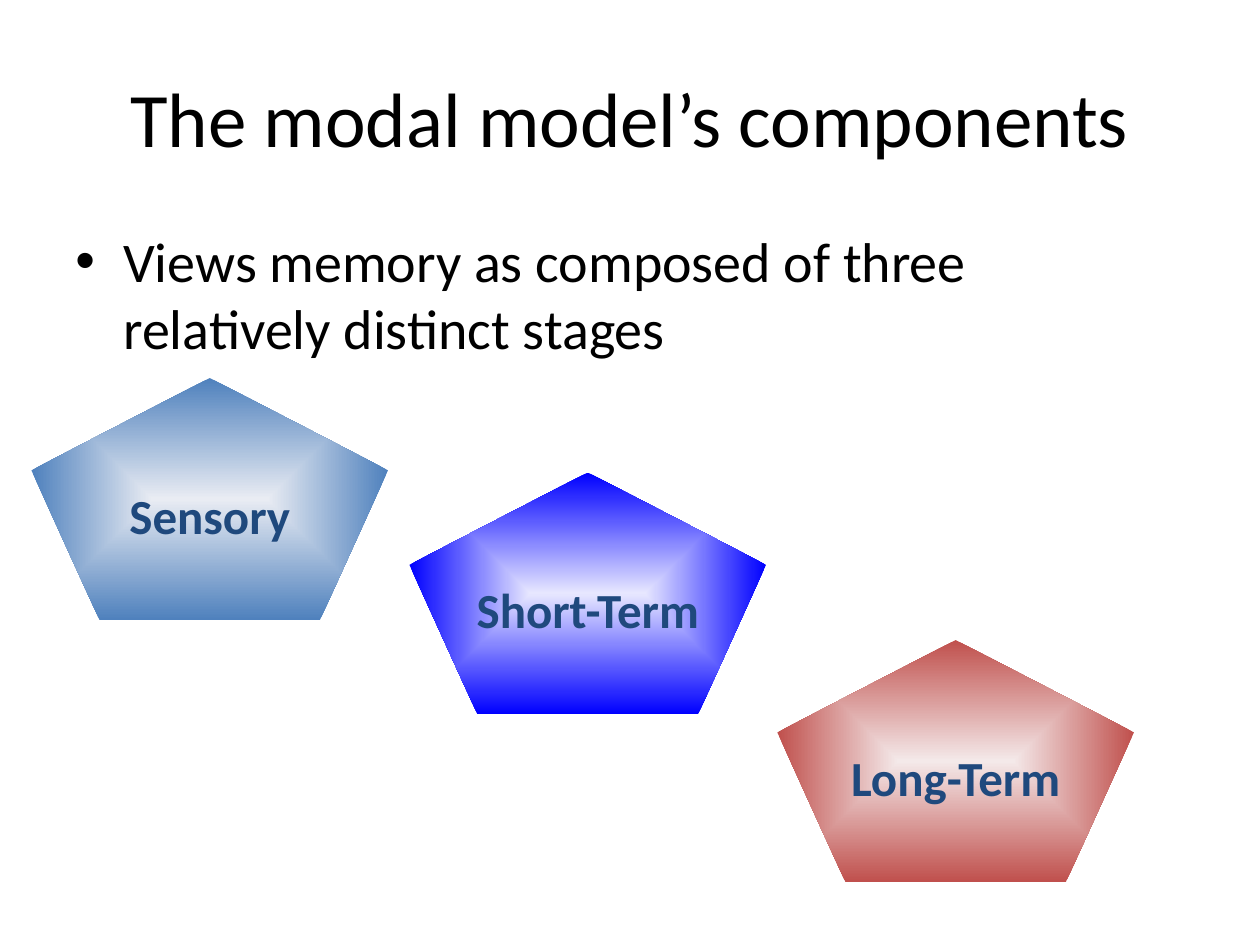
from lxml import etree
from pptx import Presentation
from pptx import util as u
from pptx.dml import color
from pptx.enum import shapes, text
from pptx.oxml import ns

COLORS = {
    "text": "000000",
    "label": "1F497D",
    "sensory": ("E9ECF3", "4F81BD"),
    "short": ("E7E7FF", "0000FF"),
    "long": ("F4E9E9", "C0504D"),
}


def add_text(shape, words, size, hue, bold=False):
    paragraph = shape.text_frame.paragraphs[0]
    run = paragraph.add_run()
    run.text = words
    run.font.name = "Calibri"
    run.font.size = u.Pt(size)
    run.font.bold = bold
    run.font.color.rgb = color.RGBColor.from_string(hue)
    return paragraph


prs = Presentation()
prs.slide_width, prs.slide_height = u.Inches(10), u.Inches(7.5)
slide = prs.slides.add_slide(prs.slide_layouts[6])

# Title
title = slide.shapes.add_textbox(u.Inches(0.5), u.Inches(0.3), u.Inches(9), u.Inches(1.25))
title.text_frame.word_wrap = True
title.text_frame.vertical_anchor = text.MSO_ANCHOR.MIDDLE
heading = add_text(title, "The modal model’s components", 44, COLORS["text"])
heading.alignment = text.PP_ALIGN.CENTER

# Bulleted summary with a hanging indent
summary = slide.shapes.add_textbox(u.Inches(0.5), u.Inches(1.75), u.Inches(9), u.Inches(4.95))
summary.text_frame.word_wrap = True
point = add_text(summary, "Views memory as composed of three relatively distinct stages",
                 32, COLORS["text"])
point.space_before = u.Pt(6.4)
point_pr = point._p.get_or_add_pPr()
point_pr.set("marL", str(u.Inches(0.38)))
point_pr.set("indent", str(u.Inches(-0.38)))
etree.SubElement(point_pr, ns.qn("a:buFont"), typeface="Arial")
etree.SubElement(point_pr, ns.qn("a:buChar"), char="•")

# Three memory stages, stepping down to the right
stages = [
    ("Sensory", 0.25, 3, "sensory"),
    ("Short-Term", 3.25, 3.75, "short"),
    ("Long-Term", 6.17, 5.08, "long"),
]
for name, left, top, key in stages:
    stage = slide.shapes.add_shape(shapes.MSO_SHAPE.REGULAR_PENTAGON, u.Inches(left),
                                   u.Inches(top), u.Inches(2.83), u.Inches(1.92))
    stage.shadow.inherit = False
    stage.line.fill.background()

    # Gradient from the light centre to the dark outline
    stage.fill.gradient()
    for stop, hue in zip(stage.fill.gradient_stops, COLORS[key]):
        stop.color.rgb = color.RGBColor.from_string(hue)
    gradient = stage._element.spPr.find(ns.qn("a:gradFill"))
    gradient.remove(gradient.find(ns.qn("a:lin")))
    spread = etree.SubElement(gradient, ns.qn("a:path"), {"path": "shape"})
    etree.SubElement(spread, ns.qn("a:fillToRect"), l="50000", t="50000", r="50000", b="50000")

    # Stage name
    frame = stage.text_frame
    frame.word_wrap = False
    frame.vertical_anchor = text.MSO_ANCHOR.MIDDLE
    frame.margin_bottom = u.Inches(0.25)
    label = add_text(stage, name, 28, COLORS["label"], bold=True)
    label.alignment = text.PP_ALIGN.CENTER

prs.save("out.pptx")
